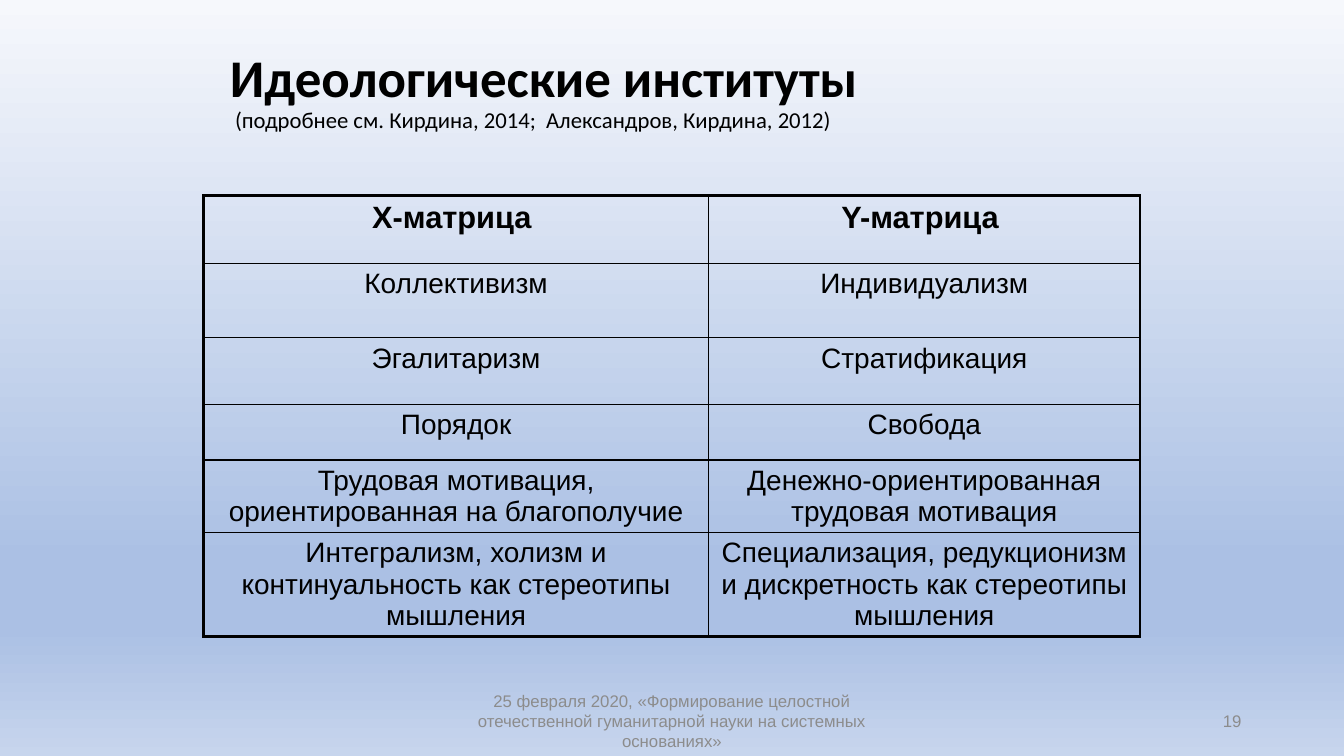
from lxml import etree
from pptx import Presentation
from pptx.dml.color import RGBColor
from pptx.enum.text import MSO_ANCHOR, MSO_AUTO_SIZE, PP_ALIGN
from pptx.oxml.ns import qn
from pptx.util import Cm, Pt

LEFT, CENTER, RIGHT = PP_ALIGN.LEFT, PP_ALIGN.CENTER, PP_ALIGN.RIGHT
MIDDLE = MSO_ANCHOR.MIDDLE
NO_AUTOFIT = MSO_AUTO_SIZE.NONE
THICK, THIN = Pt(2.25), Pt(1)
BLACK, GREY = "000000", "8C8C8C"


def style(span, font, size, color, bold=False):
    span.font.name = font
    span.font.size = Pt(size)
    span.font.bold = bold
    span.font.color.rgb = RGBColor.from_string(color)


def add_colored(parent, tag, color, **attributes):
    """Add an XML element that holds one solid colour."""
    element = etree.SubElement(parent, qn(tag), **attributes)
    holder = element if tag == "a:gs" else etree.SubElement(element, qn("a:solidFill"))
    etree.SubElement(holder, qn("a:srgbClr"), val=color)


deck = Presentation()
deck.slide_width, deck.slide_height = Cm(33.87), Cm(19.05)
page = deck.slides.add_slide(deck.slide_layouts[5])

# Background gradient, running from top to bottom
backdrop = page.background.fill
backdrop.gradient()
backdrop.gradient_angle = 270
stops = page.element.find(".//" + qn("a:gsLst"))
for stop in list(stops):
    stops.remove(stop)
for percent, color in [(0, "F6F8FC"), (74, "ABC0E4"), (83, "ABC0E4"), (100, "C7D5ED")]:
    add_colored(stops, "a:gs", color, pos=str(percent * 1000))

# Title with the reference on its second line
title = page.shapes.title
title.left, title.top, title.width, title.height = Cm(5.54), Cm(1.12), Cm(23.29), Cm(2.44)
title.text_frame.text = (
    "Идеологические институты\v (подробнее см. Кирдина, 2014;  Александров, Кирдина, 2012)"
)
title.text_frame.auto_size = NO_AUTOFIT
title.text_frame.vertical_anchor = MIDDLE
para = title.text_frame.paragraphs[0]
para.alignment = LEFT
para.line_spacing = 0.9
heading, reference = para.runs
style(heading, "Calibri", 37.8, BLACK, True)
style(reference, "Calibri", 16.2, BLACK)

# Table of the two matrices
rows = [
    ("Х-матрица ", "Y-матрица "),
    ("Коллективизм", "Индивидуализм"),
    ("Эгалитаризм", "Стратификация"),
    ("Порядок", "Свобода"),
    ("Трудовая мотивация, ориентированная на благополучие",
     "Денежно-ориентированная трудовая мотивация"),
    ("Интегрализм, холизм и континуальность как стереотипы мышления",
     "Специализация, редукционизм и дискретность как стереотипы мышления"),
]
widths = [12.73, 10.87]
heights = [1.7, 1.88, 1.68, 1.4, 1.83, 2.6]
table = page.shapes.add_table(
    len(rows), len(widths), Cm(5.13), Cm(4.93), Cm(sum(widths)), Cm(sum(heights))
).table
table.first_row = table.horz_banding = False
for column, width in zip(table.columns, widths):
    column.width = Cm(width)
for row, height in zip(table.rows, heights):
    row.height = Cm(height)

for r, texts in enumerate(rows):
    for c, text in enumerate(texts):
        cell = table.cell(r, c)
        cell.text = text
        para = cell.text_frame.paragraphs[0]
        para.alignment = CENTER
        style(para.runs[0], "Arial", 20 if r else 22, BLACK, r == 0)
        # Thick lines on the outer edge, thin lines inside
        outer_edges = {
            "a:lnL": c == 0,
            "a:lnR": c == len(widths) - 1,
            "a:lnT": r == 0,
            "a:lnB": r == len(rows) - 1,
        }
        properties = cell._tc.get_or_add_tcPr()
        for tag, outer in outer_edges.items():
            add_colored(properties, tag, BLACK, w=str(int(THICK if outer else THIN)))
        cell.fill.background()

# Footer and page number
footers = [
    ("25 февраля 2020, «Формирование целостной отечественной гуманитарной науки "
     "на системных основаниях»", 11.22, 11.43, CENTER),
    ("19", 23.92, 7.62, RIGHT),
]
for text, left, width, alignment in footers:
    box = page.shapes.add_textbox(Cm(left), Cm(17.66), Cm(width), Cm(1.01))
    box.text_frame.word_wrap = True
    box.text_frame.auto_size = NO_AUTOFIT
    box.text_frame.vertical_anchor = MIDDLE
    para = box.text_frame.paragraphs[0]
    para.text = text
    para.alignment = alignment
    style(para.runs[0], "Arial", 12, GREY)

deck.save("out.pptx")
